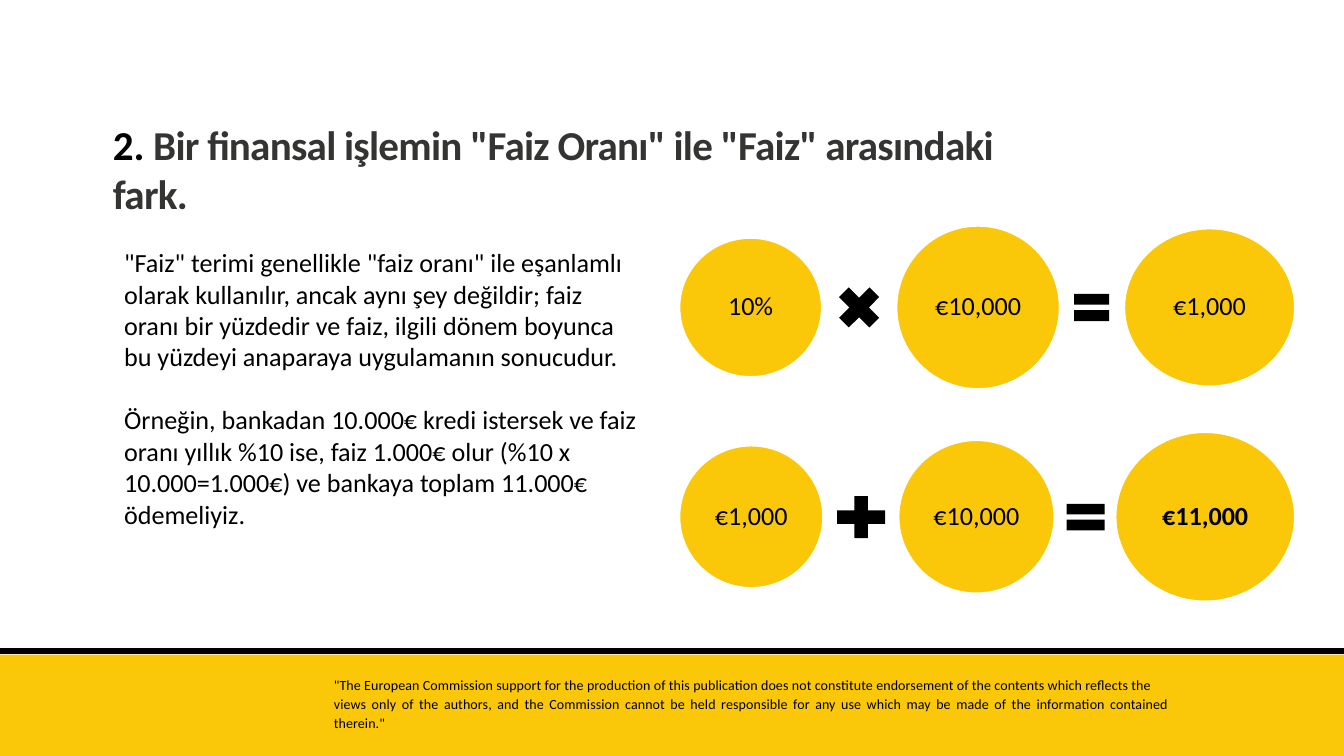
from pptx import Presentation, util as u
from pptx.dml.color import RGBColor
from pptx.enum import shapes, text
from pptx.oxml import parse_xml
from pptx.oxml.ns import nsdecls

PX = 9144
HUES = {"gold": "FAC709", "ink": "000000", "grey": "343433", "white": "FFFFFF"}
KIND = shapes.MSO_SHAPE
ALIGN = text.PP_ALIGN


def style(font, size, hue="ink", bold=False):
    font.name = "Calibri"
    font.size = u.Pt(size)
    font.bold = bold
    font.color.rgb = RGBColor.from_string(HUES[hue])


def draw(home, kind, box, fill, edge=None):
    shape = home.add_shape(kind, *[n * PX for n in box])
    shape.shadow.inherit = False
    shape.fill.solid()
    shape.fill.fore_color.rgb = RGBColor.from_string(HUES[fill])
    if edge:
        shape.line.color.rgb = RGBColor.from_string(HUES[edge])
        shape.line.width = u.Pt(2)
    else:
        shape.line.fill.background()
    return shape


deck = Presentation()
deck.slide_width = 2000 * PX
deck.slide_height = 1125 * PX
slide = deck.slides.add_slide(deck.slide_layouts[5])

draw(slide.shapes, KIND.RECTANGLE, (0, 974, 2000, 151), "gold")
rule = slide.shapes.add_connector(shapes.MSO_CONNECTOR.STRAIGHT, 0, 969 * PX, 2000 * PX, 969 * PX)
rule.line.color.rgb = RGBColor.from_string(HUES["ink"])
rule.line.width = u.Pt(6.75)
rule._element.spPr.append(parse_xml(f"<a:effectLst {nsdecls('a')}/>"))

title = slide.shapes.title
title.left, title.top, title.width, title.height = [n * PX for n in (158, 172, 1350, 158)]
frame = title.text_frame
frame.word_wrap = True
frame.auto_size = text.MSO_AUTO_SIZE.NONE
frame.vertical_anchor = text.MSO_ANCHOR.TOP
para = frame.paragraphs[0]
para.alignment = ALIGN.LEFT
for words, hue, gap in [
    ("2.", "ink", 0),
    (' Bir finansal işlemin "Faiz Oranı" ile "Faiz" arasındaki fark.', "grey", -80),
]:
    run = para.add_run()
    run.text = words
    style(run.font, 44, hue, True)
    run._r.get_or_add_rPr().set("spc", str(gap))

notes = [
    ((175, 362, 783, 481), 28, ALIGN.LEFT, (None, None), 34, 0, [
        '"Faiz" terimi genellikle "faiz oranı" ile eşanlamlı olarak kullanılır, ancak aynı şey '
        "değildir; faiz oranı bir yüzdedir ve faiz, ilgili dönem boyunca bu yüzdeyi anaparaya "
        "uygulamanın sonucudur.",
        "Örneğin, bankadan 10.000€ kredi istersek ve faiz oranı yıllık %10 ise, faiz 1.000€ olur "
        "(%10 x 10.000=1.000€) ve bankaya toplam 11.000€ ödemeliyiz.",
    ]),
    ((487, 1004, 1263, 88), 15, ALIGN.JUSTIFY, (u.Pt(16.1), 1.13), 0, 10, [
        '"The European Commission support for the production of this publication does not '
        "constitute endorsement of the contents which reflects the",
        "views only of the authors, and the Commission cannot be held responsible for any use "
        'which may be made of the information contained therein."',
    ]),
]
for box, size, align, leads, gap, track, lines in notes:
    frame = slide.shapes.add_textbox(*[n * PX for n in box]).text_frame
    frame.word_wrap = True
    for i, words in enumerate(lines):
        para = frame.paragraphs[0] if i == 0 else frame.add_paragraph()
        run = para.add_run()
        run.text = words
        if track:
            run._r.get_or_add_rPr().set("spc", str(track))
        para.alignment = align
        para.line_spacing = leads[i]
        if i:
            para.space_before = u.Pt(gap)
        style(para.font, size)

sums = [
    (457, [
        (KIND.OVAL, 1011, 212, 207, "10%"),
        (KIND.MATH_MULTIPLY, 1235, 87, 87, ""),
        (KIND.OVAL, 1334, 243, 243, "€10,000"),
        (KIND.MATH_EQUAL, 1589, 71, 69, ""),
        (KIND.OVAL, 1673, 254, 235, "€1,000"),
    ]),
    (769, [
        (KIND.OVAL, 1011, 214, 212, "€1,000"),
        (KIND.MATH_PLUS, 1233, 97, 85, ""),
        (KIND.OVAL, 1337, 232, 228, "€10,000"),
        (KIND.MATH_EQUAL, 1577, 77, 67, ""),
        (KIND.OVAL, 1660, 267, 252, "€11,000"),
    ]),
]
for mid, parts in sums:
    group = slide.shapes.add_group_shape()
    for kind, left, wide, high, words in parts:
        box = (left, mid - high // 2, wide, high)
        if not words:
            draw(group.shapes, kind, box, "ink")
            continue
        frame = draw(group.shapes, kind, box, "gold", "white").text_frame
        frame.word_wrap = True
        frame.vertical_anchor = text.MSO_ANCHOR.MIDDLE
        frame.margin_left = frame.margin_right = 4 * PX
        frame.margin_top = frame.margin_bottom = 4 * PX
        para = frame.paragraphs[0]
        para.text = words
        para.alignment = ALIGN.CENTER
        para.line_spacing = 0.9
        style(para.font, 28, bold=words == "€11,000")

deck.save("out.pptx")
